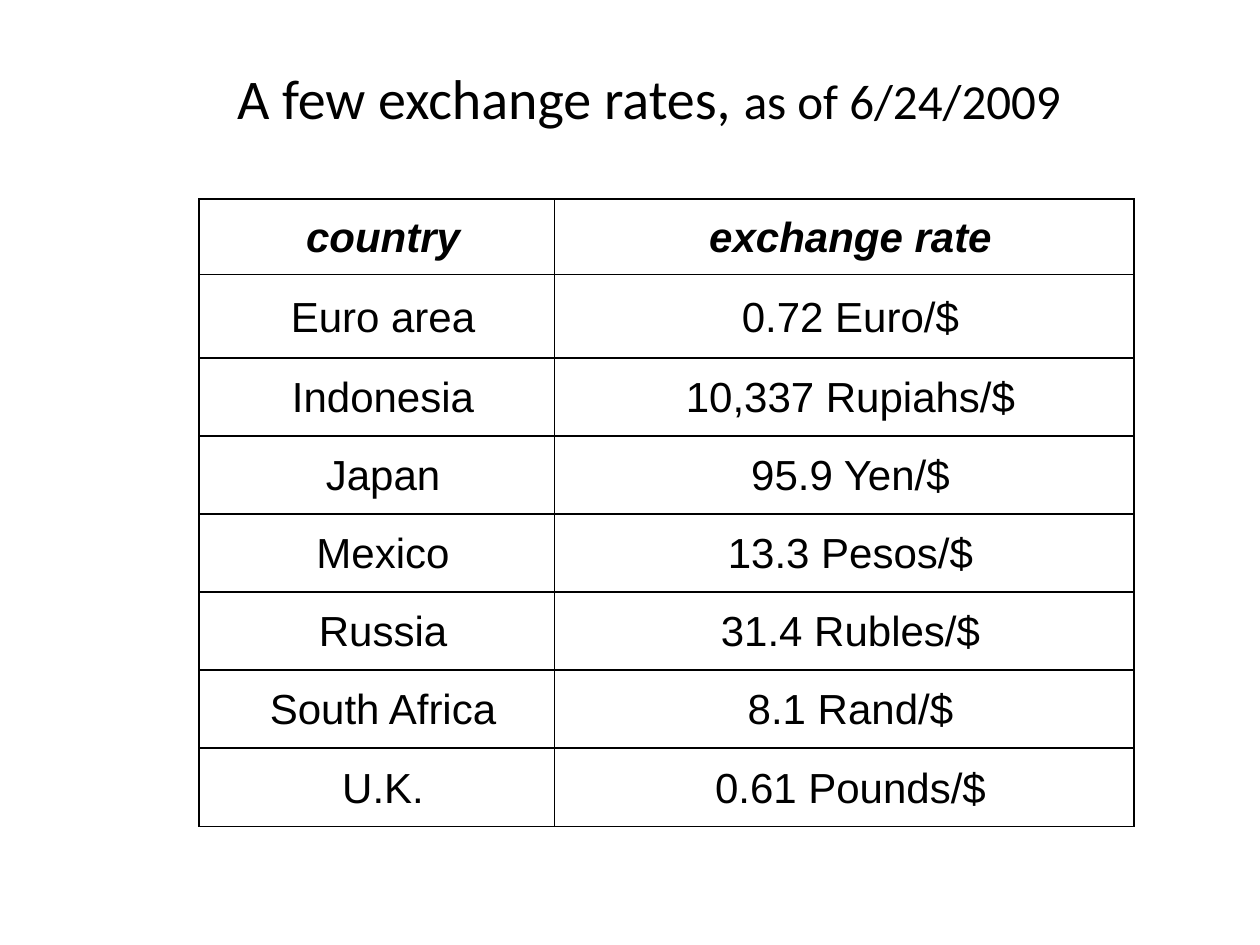
from pptx import Presentation
from pptx.dml.color import RGBColor
from pptx.enum.text import MSO_ANCHOR as Anchor, PP_ALIGN as Align
from pptx.oxml import parse_xml
from pptx.oxml.ns import nsdecls
from pptx.util import Inches, Pt

BLACK = RGBColor(0, 0, 0)
WHITE = RGBColor(255, 255, 255)

RATES = [
    ("country", "exchange rate"),
    ("Euro area", "0.72 Euro/$"),
    ("Indonesia", "10,337 Rupiahs/$"),
    ("Japan", "95.9 Yen/$"),
    ("Mexico", "13.3 Pesos/$"),
    ("Russia", "31.4 Rubles/$"),
    ("South Africa", "8.1 Rand/$"),
    ("U.K.", "0.61 Pounds/$"),
]
WIDTHS = [2.82, 4.6]
HEIGHTS = [0.6, 0.66] + [0.62] * 6


class Deck:
    head_font = "Calibri"
    body_font = "Arial"
    body_size = 24

    def __init__(self):
        self.prs = Presentation()
        self.prs.slide_width = Inches(10)
        self.prs.slide_height = Inches(7.5)
        self.slide = self.prs.slides.add_slide(self.prs.slide_layouts[5])

    def style(self, run, font, size, strong=False):
        run.font.name = font
        run.font.size = Pt(size)
        run.font.color.rgb = BLACK
        run.font.bold = run.font.italic = strong

    def title(self, parts, left, top, width, height):
        """Fill the title from (text, size) parts."""
        box = self.slide.shapes.title
        box.left, box.top = Inches(left), Inches(top)
        box.width, box.height = Inches(width), Inches(height)
        box.text_frame.vertical_anchor = Anchor.MIDDLE
        para = box.text_frame.paragraphs[0]
        para.alignment = Align.CENTER
        for text, size in parts:
            run = para.add_run()
            run.text = text
            self.style(run, self.head_font, size)

    def border(self, cell):
        props = cell._tc.get_or_add_tcPr()
        for i, side in enumerate(("lnL", "lnR", "lnT", "lnB")):
            line = parse_xml(
                f'<a:{side} {nsdecls("a")} w="12700"><a:solidFill>'
                f'<a:srgbClr val="{BLACK}"/></a:solidFill></a:{side}>')
            props.insert(i, line)

    def cell(self, cell, text, strong):
        cell.fill.solid()
        cell.fill.fore_color.rgb = WHITE
        cell.vertical_anchor = Anchor.MIDDLE
        cell.margin_left, cell.margin_right = Inches(0.2), Inches(0.1)
        cell.margin_top = cell.margin_bottom = Inches(0.05)
        para = cell.text_frame.paragraphs[0]
        para.text = text
        para.alignment = Align.CENTER
        para.line_spacing = 1.05
        self.style(para.runs[0], self.body_font, self.body_size, strong)
        self.border(cell)

    def table(self, rows, left, top, widths, heights):
        grid = self.slide.shapes.add_table(
            len(rows), len(widths), Inches(left), Inches(top),
            Inches(sum(widths)), Inches(sum(heights))).table
        for col, width in zip(grid.columns, widths):
            col.width = Inches(width)
        for row, height in zip(grid.rows, heights):
            row.height = Inches(height)
        for r, row in enumerate(rows):
            for c, text in enumerate(row):
                self.cell(grid.cell(r, c), text, strong=r == 0)


def main():
    deck = Deck()
    deck.title([("A few exchange rates, ", 32), ("as of 6/24/2009", 28)],
               0.77, 0.26, 8.76, 1.03)
    deck.table(RATES, 1.58, 1.58, WIDTHS, HEIGHTS)
    deck.prs.save("out.pptx")


if __name__ == "__main__":
    main()
